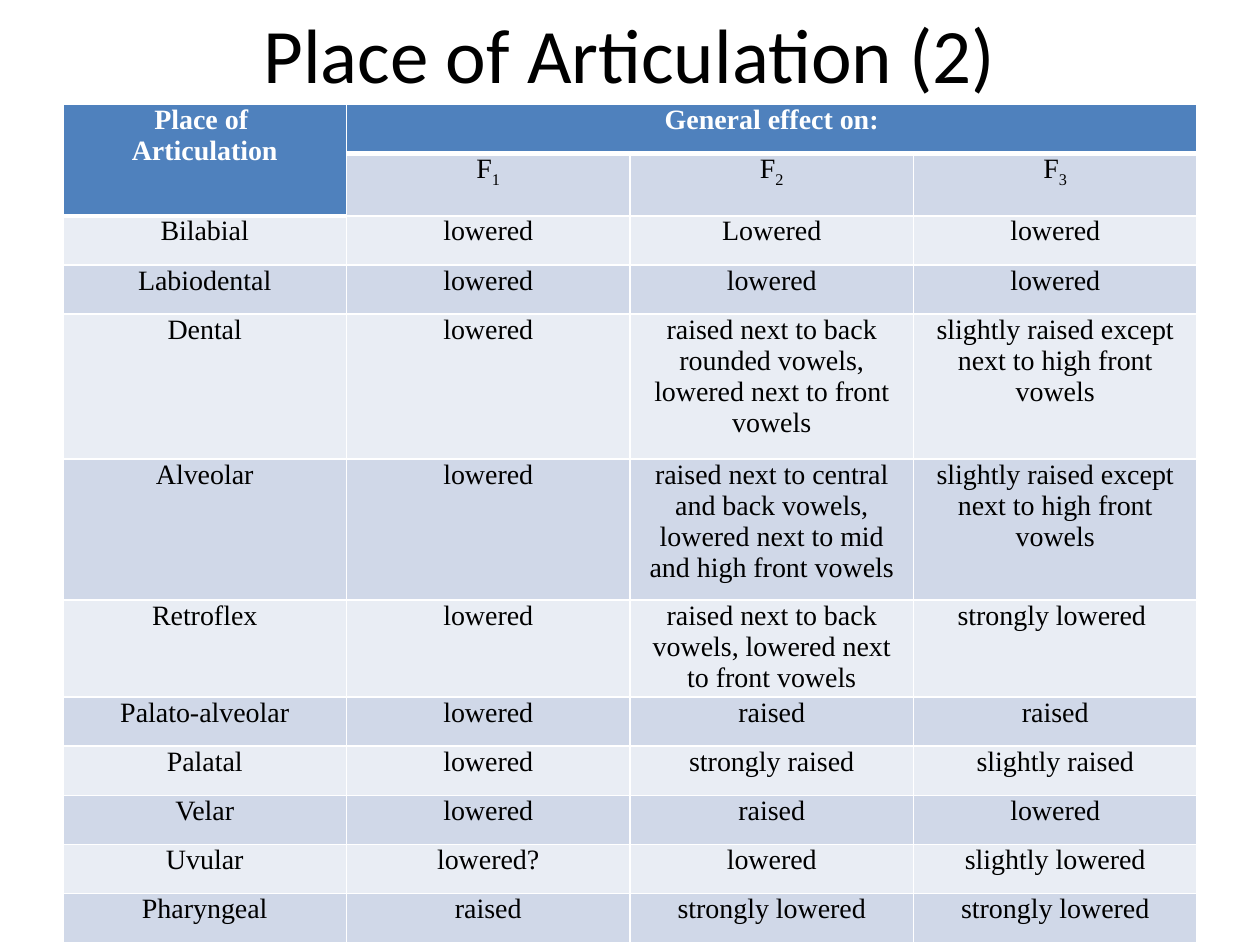
from lxml.etree import SubElement
from pptx import Presentation
from pptx.dml.color import RGBColor
from pptx.enum.text import MSO_ANCHOR, PP_ALIGN
from pptx.oxml.ns import qn
from pptx.util import Inches, Pt

COLORS = {
    "header": "4F81BD",
    "band_dark": "D0D8E8",
    "band_light": "E9EDF4",
    "border": "FFFFFF",
    "header_text": "FFFFFF",
    "text": "000000",
}
MARGIN = 0.5
TITLE_HEIGHT = 0.83
LINE_ROW = 0.39
SUBHEADER_ROW = 0.49
TALL_ROWS = {"Dental": 1.15, "Alveolar": 1.12, "Retroflex": 0.77}

FORMANTS = ["1", "2", "3"]
EFFECTS = [
    ("Bilabial", "lowered", "Lowered", "lowered"),
    ("Labiodental", "lowered", "lowered", "lowered"),
    ("Dental", "lowered",
     "raised next to back rounded vowels, lowered next to front vowels",
     "slightly raised except next to high front vowels"),
    ("Alveolar", "lowered",
     "raised next to central and back vowels, lowered next to mid and high front vowels",
     "slightly raised except next to high front vowels"),
    ("Retroflex", "lowered",
     "raised next to back vowels, lowered next to front vowels",
     "strongly lowered "),
    ("Palato-alveolar", "lowered", "raised", "raised"),
    ("Palatal", "lowered", "strongly raised", "slightly raised"),
    ("Velar", "lowered", "raised", "lowered"),
    ("Uvular", "lowered?", "lowered", "slightly lowered"),
    ("Pharyngeal", "raised", "strongly lowered", "strongly lowered"),
]


def color(name):
    return RGBColor.from_string(COLORS[name])


def set_borders(cell, bottom_width=1):
    properties = cell._tc.get_or_add_tcPr()
    widths = {"a:lnL": 1, "a:lnR": 1, "a:lnT": 1, "a:lnB": bottom_width}
    for tag, width in widths.items():
        line = SubElement(properties, qn(tag), w=str(Pt(width)))
        fill = SubElement(line, qn("a:solidFill"))
        SubElement(fill, qn("a:srgbClr"), val=COLORS["border"])


def format_cell(cell, fill, is_header=False, bottom_width=1):
    set_borders(cell, bottom_width)
    cell.fill.solid()
    cell.fill.fore_color.rgb = color(fill)
    cell.margin_left = cell.margin_right = Inches(0.07)
    cell.margin_top = cell.margin_bottom = 0
    for paragraph in cell.text_frame.paragraphs:
        paragraph.alignment = PP_ALIGN.CENTER
        for run in paragraph.runs:
            run.font.name = "Times New Roman"
            run.font.size = Pt(16)
            run.font.bold = is_header
            run.font.color.rgb = color("header_text" if is_header else "text")


def add_title(slide, text, left, top, width, height):
    title = slide.shapes.title
    title.left, title.top = Inches(left), Inches(top)
    title.width, title.height = Inches(width), Inches(height)
    title.text_frame.text = text
    title.text_frame.vertical_anchor = MSO_ANCHOR.MIDDLE
    paragraph = title.text_frame.paragraphs[0]
    paragraph.alignment = PP_ALIGN.CENTER
    font = paragraph.runs[0].font
    font.name, font.size = "Calibri", Pt(44)
    font.color.rgb = color("text")


def fill_headers(table):
    """Fill the two header rows: merged headings, then the formant names."""
    table.cell(0, 0).merge(table.cell(1, 0))
    table.cell(0, 1).merge(table.cell(0, len(FORMANTS)))
    table.cell(0, 0).text_frame.text = "Place of \nArticulation"
    table.cell(0, 1).text_frame.text = "General effect on:"
    header_cells = list(table.rows[0].cells) + [table.cell(1, 0)]
    for cell in header_cells:
        format_cell(cell, "header", is_header=True, bottom_width=3)
    for column, number in enumerate(FORMANTS, start=1):
        cell = table.cell(1, column)
        paragraph = cell.text_frame.paragraphs[0]
        paragraph.add_run().text = "F"
        subscript = paragraph.add_run()
        subscript.text = number
        format_cell(cell, "band_dark")
        subscript.font._element.set("baseline", "-25000")


def add_effects_table(slide, left, top, width):
    heights = [LINE_ROW, SUBHEADER_ROW]
    heights += [TALL_ROWS.get(place, LINE_ROW) for place, *_ in EFFECTS]
    column_count = len(FORMANTS) + 1
    frame = slide.shapes.add_table(
        len(heights), column_count,
        Inches(left), Inches(top), Inches(width), Inches(sum(heights)))
    table = frame.table
    for column in table.columns:
        column.width = Inches(width / column_count)
    for row, height in zip(table.rows, heights):
        row.height = Inches(height)
    fill_headers(table)
    for row_index, effects in enumerate(EFFECTS, start=2):
        band = "band_dark" if row_index % 2 else "band_light"
        for column, text in enumerate(effects):
            cell = table.cell(row_index, column)
            cell.text_frame.text = text
            format_cell(cell, band)


def main():
    presentation = Presentation()
    presentation.slide_width, presentation.slide_height = Inches(10), Inches(7.5)
    slide = presentation.slides.add_slide(presentation.slide_layouts[5])
    content_width = 10 - 2 * MARGIN
    add_title(slide, "Place of Articulation (2)", MARGIN, 0, content_width, TITLE_HEIGHT)
    add_effects_table(slide, MARGIN, TITLE_HEIGHT, content_width)
    presentation.save("out.pptx")


if __name__ == "__main__":
    main()
